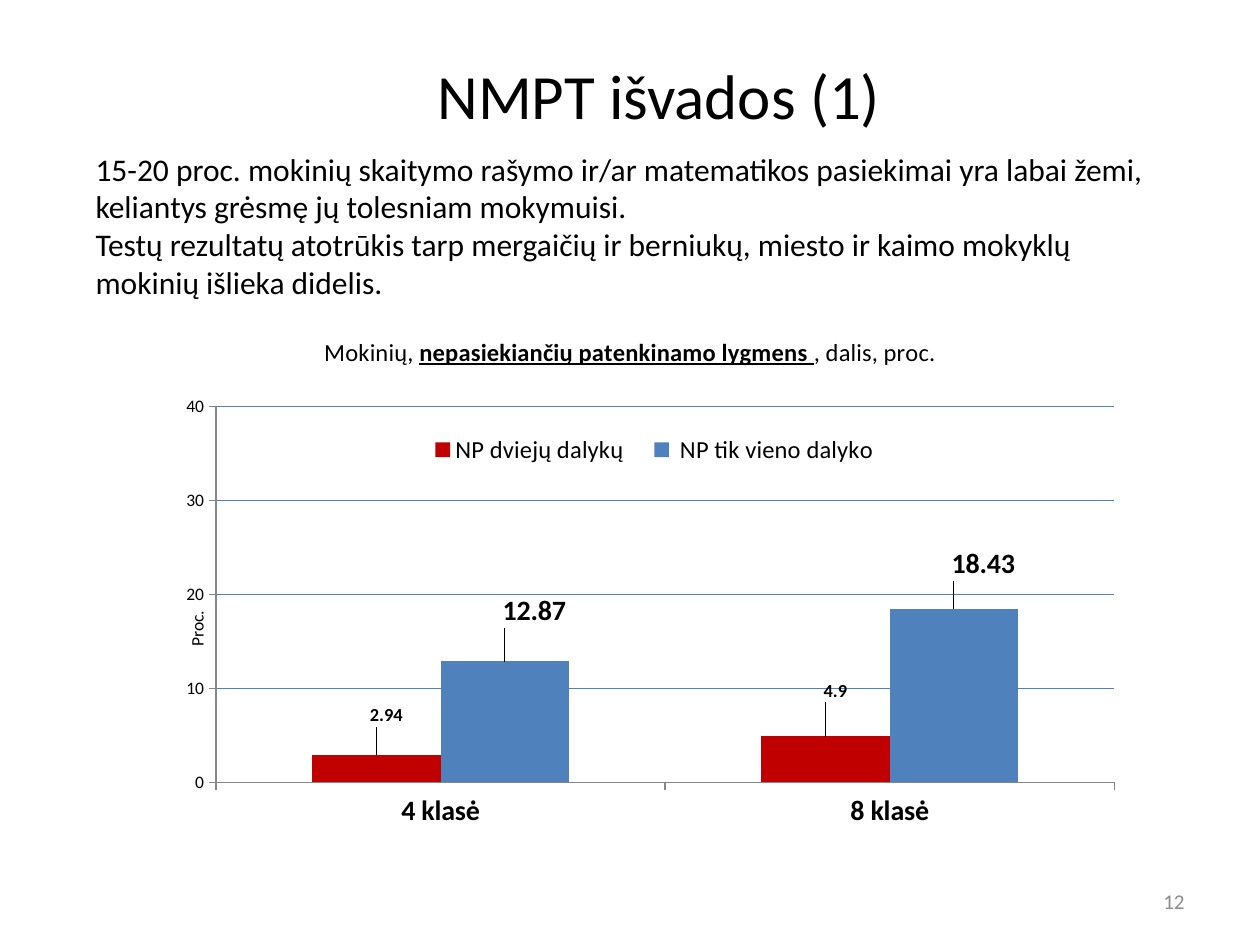
from lxml import etree
from pptx import Presentation
from pptx.chart.data import CategoryChartData
from pptx.dml.color import RGBColor
from pptx.enum.chart import XL_CHART_TYPE as ChartType
from pptx.enum.chart import XL_LABEL_POSITION as LabelPosition
from pptx.enum.chart import XL_LEGEND_POSITION as LegendPosition
from pptx.enum.chart import XL_TICK_MARK as TickMark
from pptx.enum.text import MSO_ANCHOR as Anchor
from pptx.enum.text import PP_ALIGN as Align
from pptx.oxml.ns import qn
from pptx.util import Pt

FONT = "Calibri"
COLORS = {
    "text": "000000",
    "page": "8C8C8C",
    "both": "C00000",
    "single": "4F81BD",
    "axis": "868686",
}

FINDINGS = [
    "15-20 proc. mokinių skaitymo rašymo ir/ar matematikos pasiekimai yra "
    "labai žemi, keliantys grėsmę jų tolesniam mokymuisi.",
    "Testų rezultatų atotrūkis tarp mergaičių ir berniukų, miesto ir kaimo "
    "mokyklų mokinių išlieka didelis.",
]
GRADES = ["4 klasė", "8 klasė"]
# name, values, colour, label size, label offsets as fractions of the chart
SERIES = [
    ("NP dviejų dalykų ", (2.94, 4.9), "both", 10.5, [(0.01, -0.04), (0.01, -0.05)]),
    (" NP tik vieno dalyko", (12.87, 18.43), "single", 16, [(0.03, -0.05), (0.03, -0.04)]),
]


def rgb(name):
    return RGBColor.from_string(COLORS[name])


def style_font(font, size, color="text", bold=False):
    font.name, font.size, font.bold = FONT, Pt(size), bold
    font.color.rgb = rgb(color)


def add_text(slide, box, paragraphs, size, color="text", align=Align.LEFT, anchor=Anchor.MIDDLE):
    frame = slide.shapes.add_textbox(*map(Pt, box)).text_frame
    frame.word_wrap = True
    frame.vertical_anchor = anchor
    frame.text = "\n".join(paragraphs)
    for paragraph in frame.paragraphs:
        paragraph.alignment = align
        for run in paragraph.runs:
            style_font(run.font, size, color)


def place(element, **layout):
    """Give a chart part a manual layout in fractions of the chart."""
    for old in element.findall(qn("c:layout")):
        element.remove(old)
    leading = {qn("c:idx"), qn("c:tx"), qn("c:legendPos")}
    position = sum(child.tag in leading for child in element)
    holder = etree.Element(qn("c:layout"))
    manual = etree.SubElement(holder, qn("c:manualLayout"))
    for tag, value in layout.items():
        etree.SubElement(manual, qn(f"c:{tag}")).set("val", str(value))
    element.insert(position, holder)


def style_title(chart):
    chart.has_title = True
    paragraph = chart.chart_title.text_frame.paragraphs[0]
    parts = ["Mokinių, ", "nepasiekiančių patenkinamo lygmens ", ", dalis, proc."]
    for index, part in enumerate(parts):
        run = paragraph.add_run()
        run.text = part
        stressed = index == 1
        style_font(run.font, 14, bold=stressed)
        run.font.underline = stressed
    title = chart.chart_title._element
    title.find(qn("c:overlay")).set("val", "1")
    place(title, xMode="edge", yMode="edge", x=0.19, y=0.04)


def style_axes(chart):
    grades, percent = chart.category_axis, chart.value_axis
    for axis in (grades, percent):
        axis.major_tick_mark = TickMark.OUTSIDE
        axis.format.line.color.rgb = rgb("axis")
    style_font(grades.tick_labels.font, 16, bold=True)
    style_font(percent.tick_labels.font, 10)
    percent.minimum_scale, percent.maximum_scale, percent.major_unit = 0, 40, 10
    gridline = percent.major_gridlines.format.line
    gridline.color.rgb, gridline.width = rgb("single"), Pt(0.75)

    percent.has_title = True
    caption = percent.axis_title.text_frame
    caption.text = "Proc."
    caption._txBody.bodyPr.set("rot", "-5400000")
    caption._txBody.bodyPr.set("vert", "horz")
    style_font(caption.paragraphs[0].runs[0].font, 10)
    place(percent.axis_title._element, xMode="edge", yMode="edge", x=0.05, y=0.53)


def style_legend(chart):
    chart.has_legend = True
    chart.legend.position = LegendPosition.BOTTOM
    chart.legend.include_in_layout = False
    style_font(chart.legend.font, 14)
    place(chart.legend._element, xMode="edge", yMode="edge", x=0.29, y=0.21, w=0.48, h=0.08)


def style_series(series, color, label_size, offsets):
    series.format.fill.solid()
    series.format.fill.fore_color.rgb = rgb(color)
    series.invert_if_negative = False
    labels = series.data_labels
    labels.show_value = True
    style_font(labels.font, label_size, bold=True)
    for index in range(len(offsets)):
        label = series.points[index].data_label
        style_font(label.font, label_size, bold=True)
        label.position = LabelPosition.OUTSIDE_END
    for label, (x, y) in zip(labels._element.findall(qn("c:dLbl")), offsets):
        place(label, x=x, y=y)


def add_results_chart(slide, box):
    data = CategoryChartData()
    data.categories = GRADES
    for name, values, *_ in SERIES:
        data.add_series(name, values)
    frame = slide.shapes.add_chart(ChartType.COLUMN_CLUSTERED, *map(Pt, box), data)
    chart = frame.chart
    style_font(chart.font, 10)
    style_title(chart)
    style_axes(chart)
    style_legend(chart)
    plot = chart.plots[0]
    plot.vary_by_categories = False
    plot.gap_width, plot.overlap = 150, 0
    for series, (_, _, color, label_size, offsets) in zip(plot.series, SERIES):
        style_series(series, color, label_size, offsets)
    place(chart._chartSpace.chart.plotArea, layoutTarget="inner", xMode="edge",
          yMode="edge", x=0.084, y=0.173, w=0.914, h=0.666)


def main():
    deck = Presentation()
    deck.slide_width, deck.slide_height = Pt(720), Pt(540)
    slide = deck.slides.add_slide(deck.slide_layouts[6])
    add_text(slide, (116, 15, 521, 78), ["NMPT išvados (1)"], 36, align=Align.CENTER)
    add_text(slide, (516, 500.5, 168, 29), ["12"], 12, "page", Align.RIGHT)
    add_results_chart(slide, (76.3, 176.4, 561.6, 322.6))
    add_text(slide, (47.5, 82, 630, 94.5), FINDINGS, 18, anchor=Anchor.TOP)
    deck.save("out.pptx")


if __name__ == "__main__":
    main()
